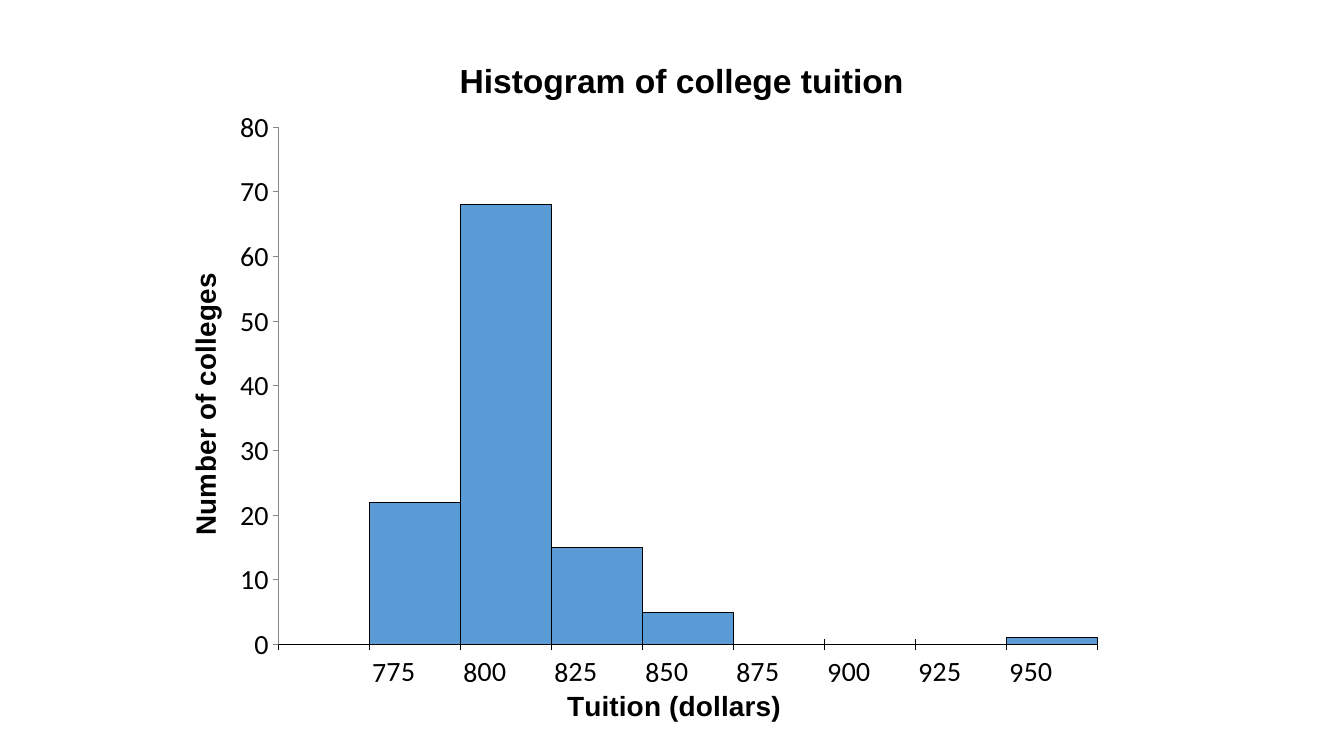
import pptx
import pptx.chart.data
import pptx.dml.color
import pptx.enum.chart
import pptx.oxml
import pptx.oxml.ns
import pptx.util

COLORS = {"text": "000000", "bar": "5B9BD5", "outline": "000000", "axis": "878787"}
SLIDE_W, SLIDE_H = 1344, 756
CHART_BOX = (128, 25, 1085, 706)
COUNTS = [0, 22, 68, 15, 5, 0, 0, 0, 1]
LABELS = [""] + [str(dollars) for dollars in range(775, 951, 25)]


def px(n):
    return pptx.util.Emu(round(n * 914400 / 100.8))


def rgb(name):
    return pptx.dml.color.RGBColor.from_string(COLORS[name])


def set_font(font, name, size, bold=False):
    font.name = name
    font.size = pptx.util.Pt(size)
    font.bold = bold
    font.color.rgb = rgb("text")


def set_line(line, color):
    line.color.rgb = rgb(color)
    line.width = pptx.util.Pt(0.75)


def set_layout(parent, index, x, y, w=None, h=None):
    """Place a chart part by fractions of the chart's size."""
    old = parent.find(pptx.oxml.ns.qn("c:layout"))
    if old is not None:
        parent.remove(old)
    parts = [("xMode", "edge"), ("yMode", "edge"), ("x", x), ("y", y)]
    if w is not None:
        parts = [("layoutTarget", "inner")] + parts + [("w", w), ("h", h)]
    inner = "".join(f'<c:{tag} val="{val}"/>' for tag, val in parts)
    parent.insert(index, pptx.oxml.parse_xml(
        f'<c:layout {pptx.oxml.ns.nsdecls("c")}>'
        f"<c:manualLayout>{inner}</c:manualLayout></c:layout>"))


def set_rotation(parent, degrees):
    body = next(parent.iter(pptx.oxml.ns.qn("a:bodyPr")))
    body.set("rot", str(degrees * 60000))
    body.set("vert", "horz")


def set_title(title, text, size, x, y, degrees=0):
    tf = title.text_frame
    tf.text = text
    set_font(tf.paragraphs[0].font, "Arial", size, bold=True)
    set_rotation(title._element, degrees)
    set_layout(title._element, 1, x, y)


def style_axis(axis, line_color, tick_mark):
    axis.has_major_gridlines = False
    axis.major_tick_mark = tick_mark
    axis.minor_tick_mark = pptx.enum.chart.XL_TICK_MARK.NONE
    set_line(axis.format.line, line_color)
    set_font(axis.tick_labels.font, "Calibri", 20)


def add_histogram(slide):
    data = pptx.chart.data.CategoryChartData()
    data.categories = LABELS
    data.add_series("Series 1", COUNTS)
    kind = pptx.enum.chart.XL_CHART_TYPE.COLUMN_CLUSTERED
    chart = slide.shapes.add_chart(kind, *map(px, CHART_BOX), data).chart
    set_font(chart.font, "Calibri", 18)
    chart.has_legend = False

    # Touching bars
    plot = chart.plots[0]
    plot.gap_width = 0
    plot.vary_by_categories = False
    bars = plot.series[0].format
    bars.fill.solid()
    bars.fill.fore_color.rgb = rgb("bar")
    set_line(bars.line, "outline")

    # Axes: labels slightly tilted, so they end at the middle of each bar
    cat, val = chart.category_axis, chart.value_axis
    ticks = pptx.enum.chart.XL_TICK_MARK
    style_axis(cat, "outline", ticks.CROSS)
    style_axis(val, "axis", ticks.OUTSIDE)
    set_rotation(cat._element.find(pptx.oxml.ns.qn("c:txPr")), -1)
    val.minimum_scale, val.maximum_scale, val.major_unit = 0, 80, 10

    # Titles and plot area
    set_title(chart.chart_title, "Histogram of college tuition", 24, 0.3, 0.04)
    set_title(cat.axis_title, "Tuition (dollars)", 20, 0.4, 0.94)
    set_title(val.axis_title, "Number of colleges", 20, 0.05, 0.35, -90)
    plot_area = next(chart._chartSpace.iter(pptx.oxml.ns.qn("c:plotArea")))
    set_layout(plot_area, 0, 0.139, 0.146, 0.755, 0.739)


def main():
    prs = pptx.Presentation()
    prs.slide_width, prs.slide_height = px(SLIDE_W), px(SLIDE_H)
    add_histogram(prs.slides.add_slide(prs.slide_layouts[6]))
    prs.save("out.pptx")


if __name__ == "__main__":
    main()
